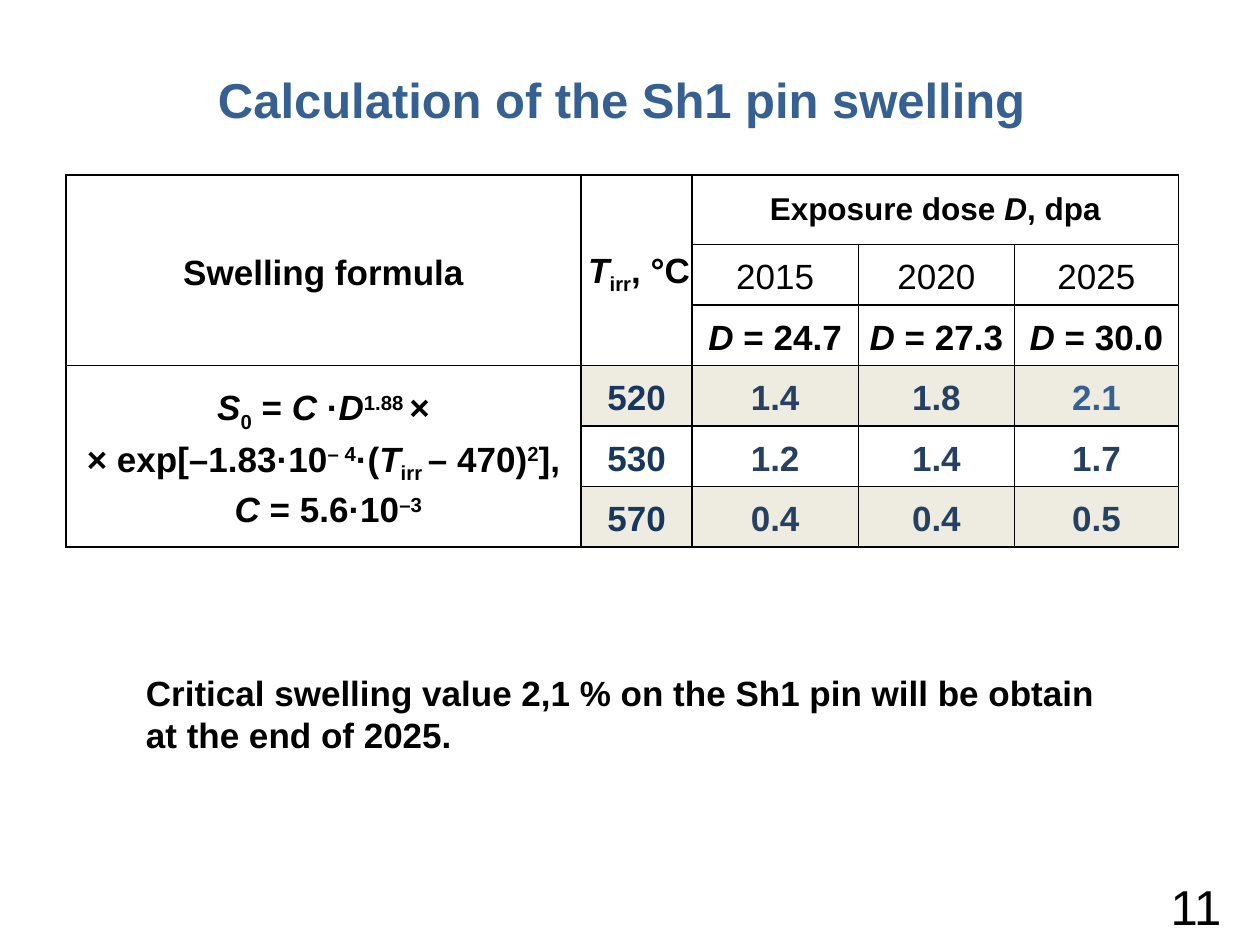
import pptx
import pptx.dml.color
import pptx.enum.text
import pptx.oxml
import pptx.oxml.ns
import pptx.util

Pt = pptx.util.Pt
RGB = pptx.dml.color.RGBColor
ALIGN = pptx.enum.text.PP_ALIGN
MIDDLE = pptx.enum.text.MSO_ANCHOR.MIDDLE

BLACK = RGB(0x00, 0x00, 0x00)
WHITE = RGB(0xFF, 0xFF, 0xFF)
BLUE = RGB(0x37, 0x60, 0x92)
NAVY = RGB(0x17, 0x37, 0x5E)
DARK_BLUE = RGB(0x25, 0x40, 0x61)
BEIGE = RGB(0xEE, 0xEC, 0xE1)

ITALIC, SUB, SUP = "italic", -25000, 30000
COLUMN_WIDTHS = (294.5, 63.4, 95, 89.3, 93.6)
ROW_HEIGHTS = (39.6,) + (34.6,) * 5
DOSES = (("2015", "24.7"), ("2020", "27.3"), ("2025", "30.0"))
SWELLING = (
    ("520", "1.4", "1.8", "2.1"),
    ("530", "1.2", "1.4", "1.7"),
    ("570", "0.4", "0.4", "0.5"),
)
TEMPERATURE = [("Т", ITALIC), ("irr", SUB), (", °С", None)]
EXPOSURE = [("Exposure dose ", None), ("D", ITALIC), (", dpa", None)]
FORMULA = [
    ("S", ITALIC), ("0", SUB), (" = ", None), ("С ", ITALIC), ("·", None),
    ("D", ITALIC), ("1.88 ", SUP), ("×", None), ("\n", None),
    ("× exp[–1.83·10", None), ("– 4", SUP), ("·(", None), ("T", ITALIC),
    ("irr ", SUB), ("– 470)", None), ("2", SUP), ("],", None),
]
CONSTANT = [(" ", None), ("C\u00a0", ITALIC), ("=\u00a05.6·10", None), ("–3", SUP)]


def write(tf, *paragraphs, size=20, color=BLACK, bold=True, align=ALIGN.CENTER, spacing=None):
    """Write paragraphs, each a string or a list of (text, style) runs."""
    for i, runs in enumerate(paragraphs):
        p = tf.add_paragraph() if i else tf.paragraphs[0]
        p.alignment = align
        p.line_spacing = spacing
        for text, style in [(runs, None)] if isinstance(runs, str) else runs:
            if text == "\n":
                p.add_line_break()
                continue
            r = p.add_run()
            r.text = text
            r.font.name = "Arial"
            r.font.size = Pt(size)
            r.font.bold = bold
            r.font.italic = style == ITALIC
            r.font.color.rgb = color
            if style in (SUB, SUP):
                r.font._element.set("baseline", str(style))


def add_borders(cell):
    """Draw a thin black line on every side of a cell."""
    tc_pr = cell._tc.get_or_add_tcPr()
    for side in "LRTB":
        tc_pr.append(pptx.oxml.parse_xml(
            f'<a:ln{side} {pptx.oxml.ns.nsdecls("a")} w="{Pt(1)}">'
            f'<a:solidFill><a:srgbClr val="{BLACK}"/></a:solidFill></a:ln{side}>'
        ))


def fill_cell(cell, *paragraphs, left=4.5, right=4.5, top=0, spacing=1.15, **fmt):
    """Set the margins of a cell and write its text in the middle."""
    cell.margin_left, cell.margin_right = Pt(left), Pt(right)
    cell.margin_top = cell.margin_bottom = Pt(top)
    cell.vertical_anchor = MIDDLE
    write(cell.text_frame, *paragraphs, spacing=spacing, **fmt)


def add_title(s, text, box):
    """Place the slide title in its placeholder."""
    sp = s.shapes.title
    sp.left, sp.top, sp.width, sp.height = map(Pt, box)
    sp.text_frame.vertical_anchor = MIDDLE
    write(sp.text_frame, text, size=28, color=BLUE)


def add_swelling_table(s, box):
    """Place the table of swelling by temperature and exposure dose."""
    frame = s.shapes.add_table(len(ROW_HEIGHTS), len(COLUMN_WIDTHS), *map(Pt, box))
    table = frame.table
    table.first_row = table.horz_banding = False
    for column, width in zip(table.columns, COLUMN_WIDTHS):
        column.width = Pt(width)
    for i, (row, height) in enumerate(zip(table.rows, ROW_HEIGHTS)):
        row.height = Pt(height)
        for j, cell in enumerate(row.cells):
            add_borders(cell)
            cell.fill.solid()
            cell.fill.fore_color.rgb = BEIGE if i in (3, 5) and j else WHITE
    for first, last in (((0, 0), (2, 0)), ((0, 1), (2, 1)), ((0, 2), (0, 4)), ((3, 0), (5, 0))):
        table.cell(*first).merge(table.cell(*last))

    fill_cell(table.cell(0, 0), "Swelling formula")
    fill_cell(table.cell(0, 1), TEMPERATURE, left=2.9, right=0)
    fill_cell(table.cell(0, 2), EXPOSURE, left=7.2, right=7.2, top=3.6, size=18, spacing=None)
    fill_cell(table.cell(3, 0), FORMULA, CONSTANT)
    for j, (year, dose) in enumerate(DOSES, 2):
        fill_cell(table.cell(1, j), year, bold=False)
        fill_cell(table.cell(2, j), [("D", ITALIC), (f" = {dose}", None)])
    for i, (temperature, *values) in enumerate(SWELLING, 3):
        fill_cell(table.cell(i, 1), temperature, color=NAVY)
        for j, value in enumerate(values, 2):
            fill_cell(table.cell(i, j), value, color=BLUE if value == "2.1" else DARK_BLUE)


def add_text(s, text, box, anchor=None, **fmt):
    """Place a wrapped text box."""
    tf = s.shapes.add_textbox(*map(Pt, box)).text_frame
    tf.word_wrap = True
    tf.vertical_anchor = anchor
    write(tf, text, **fmt)


def main():
    """Build the slide and save it."""
    prs = pptx.Presentation()
    prs.slide_width, prs.slide_height = Pt(720), Pt(540)
    s = prs.slides.add_slide(prs.slide_layouts[5])
    add_title(s, "Calculation of the Sh1 pin swelling", (28, 26.6, 654.5, 59.8))
    add_text(s, "11", (543, 503.3, 162, 28.8), anchor=MIDDLE, size=28, bold=False, align=ALIGN.RIGHT)
    add_swelling_table(s, (37.6, 100.1, sum(COLUMN_WIDTHS), sum(ROW_HEIGHTS)))
    add_text(
        s,
        "Critical swelling value 2,1 % on the Sh1 pin will be obtain at the end of 2025.",
        (76.3, 380.2, 557.3, 55.4),
        align=ALIGN.LEFT,
    )
    prs.save("out.pptx")


if __name__ == "__main__":
    main()
